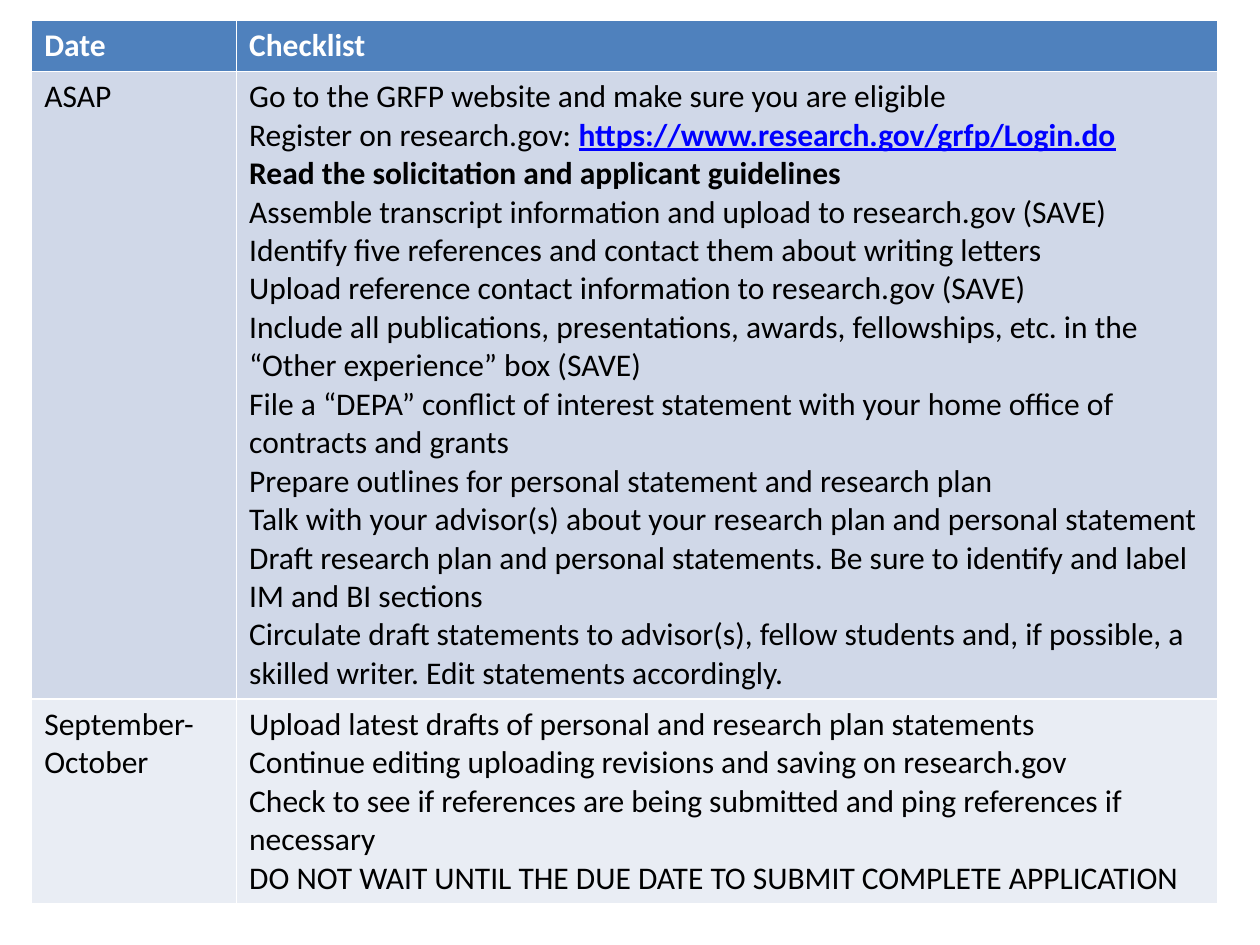
from pptx import Presentation
from pptx.dml.color import RGBColor
from pptx.util import Cm, Pt

WHITE = RGBColor(0xFF, 0xFF, 0xFF)
BLACK = RGBColor(0x00, 0x00, 0x00)
LINK_BLUE = RGBColor(0x00, 0x00, 0xFF)
HEADER_BLUE = RGBColor(0x4F, 0x81, 0xBD)
BAND_DARK = RGBColor(0xD0, 0xD8, 0xE8)
BAND_LIGHT = RGBColor(0xE9, 0xED, 0xF4)

FONT = "Calibri"
COLUMN_WIDTHS = (Cm(4.13), Cm(19.78))
ROW_HEIGHT = Cm(1.03)

REGISTER = "Register on research.gov: "
LOGIN_ADDRESS = "https://www.research.gov/grfp/Login.do"
KEY_TASK = "Read the solicitation and applicant guidelines"

ASAP_TASKS = [
    "Go to the GRFP website and make sure you are eligible",
    REGISTER,
    KEY_TASK,
    "Assemble transcript information and upload to research.gov (SAVE)",
    "Identify five references and contact them about writing letters",
    "Upload reference contact information to research.gov (SAVE)",
    "Include all publications, presentations, awards, fellowships, etc. in the "
    "“Other experience” box (SAVE)",
    "File a “DEPA” conflict of interest statement with your home office of "
    "contracts and grants",
    "Prepare outlines for personal statement and research plan",
    "Talk with your advisor(s) about your research plan and personal statement",
    "Draft research plan and personal statements. Be sure to identify and label "
    "IM and BI sections",
    "Circulate draft statements to advisor(s), fellow students and, if possible, "
    "a skilled writer. Edit statements accordingly.",
]
AUTUMN_TASKS = [
    "Upload latest drafts of personal and research plan statements",
    "Continue editing uploading revisions and saving on research.gov",
    "Check to see if references are being submitted and ping references if "
    "necessary",
    "DO NOT WAIT UNTIL THE DUE DATE TO SUBMIT COMPLETE APPLICATION",
]

# Each row: date, checklist lines, fill, text colour, bold
ROWS = [
    ("Date", ["Checklist"], HEADER_BLUE, WHITE, True),
    ("ASAP", ASAP_TASKS, BAND_DARK, BLACK, False),
    ("September-October", AUTUMN_TASKS, BAND_LIGHT, BLACK, False),
]


def add_login_address(paragraph):
    address = paragraph.add_run()
    address.text = LOGIN_ADDRESS
    address.font.color.rgb = LINK_BLUE
    address.font.bold = True
    address.font.underline = True


def fill_cell(cell, lines, fill, color, bold):
    cell.fill.solid()
    cell.fill.fore_color.rgb = fill
    cell.text = "\n".join(lines)
    for line, paragraph in zip(lines, cell.text_frame.paragraphs):
        paragraph.font.name = FONT
        paragraph.font.size = Pt(18)
        paragraph.font.color.rgb = color
        if line == REGISTER:
            add_login_address(paragraph)
        else:
            paragraph.font.bold = bold or line == KEY_TASK


def add_checklist(slide):
    frame = slide.shapes.add_table(
        len(ROWS), len(COLUMN_WIDTHS),
        Cm(0.64), Cm(0.41), sum(COLUMN_WIDTHS), ROW_HEIGHT * len(ROWS))
    checklist = frame.table
    for column, width in zip(checklist.columns, COLUMN_WIDTHS):
        column.width = width
    for row, (date, tasks, *look) in zip(checklist.rows, ROWS):
        # Rows grow from this height to fit their text
        row.height = ROW_HEIGHT
        for cell, lines in zip(row.cells, ([date], tasks)):
            fill_cell(cell, lines, *look)
    frame.height = Cm(17.55)


def main():
    deck = Presentation()
    deck.slide_width, deck.slide_height = Cm(25.4), Cm(19.05)
    slide = deck.slides.add_slide(deck.slide_layouts[6])
    add_checklist(slide)
    deck.save("out.pptx")


if __name__ == "__main__":
    main()
